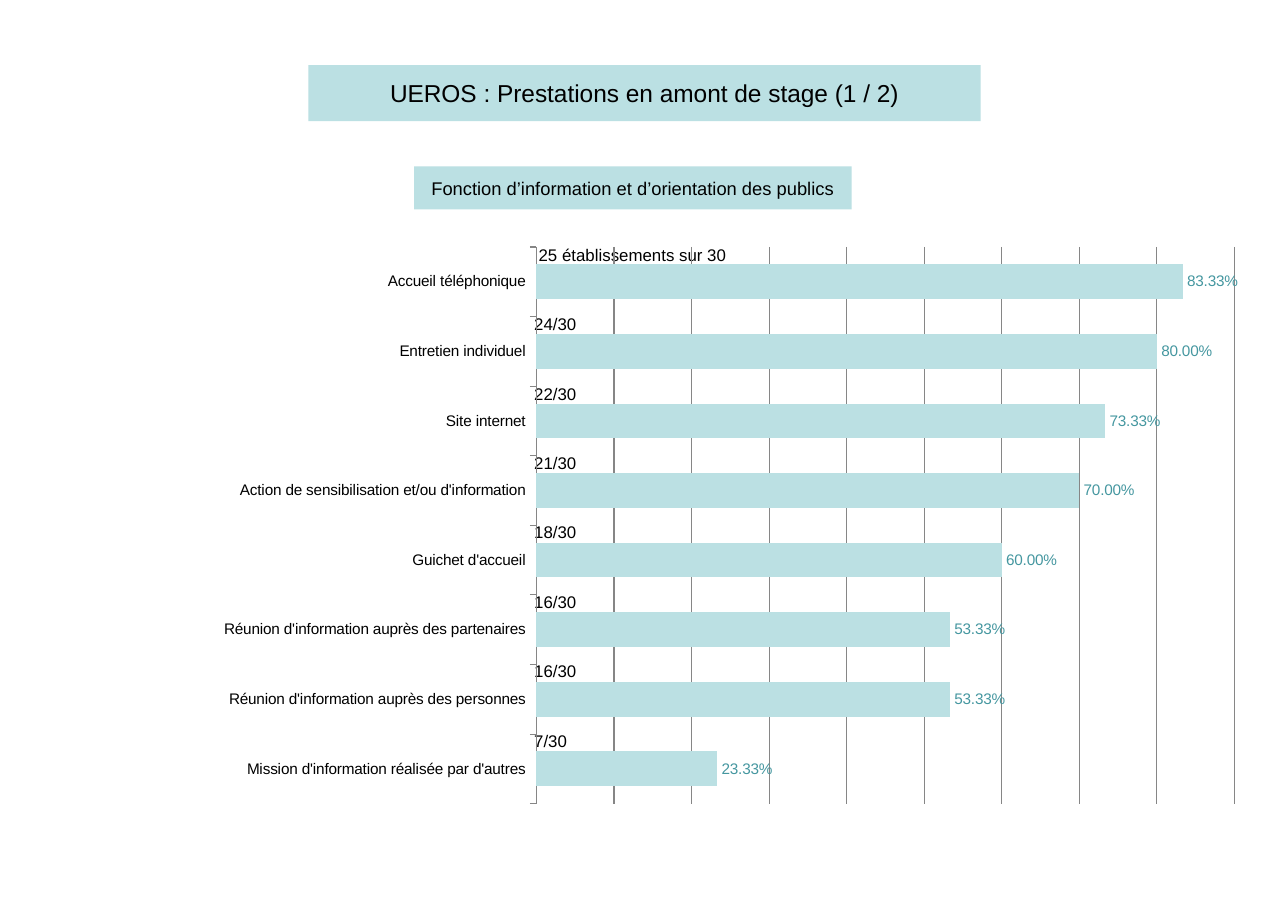
from lxml import etree
from pptx import Presentation
from pptx.chart import data
from pptx.dml import color
from pptx.enum import chart as ch, shapes, text
from pptx.oxml import ns
from pptx.util import Inches, Pt

FONT = "Arial"
BLACK, PALE, TEAL, GREY = "000000", "BBE0E3", "4597A0", "868686"
TOTAL = 30
SERVICES = [
    ("Accueil téléphonique", 25),
    ("Entretien individuel", 24),
    ("Site internet", 22),
    ("Action de sensibilisation et/ou d'information", 21),
    ("Guichet d'accueil", 18),
    ("Réunion d'information auprès des partenaires", 16),
    ("Réunion d'information auprès des personnes", 16),
    ("Mission d'information réalisée par d'autres", 7),
]
PLOT = {"x": 0.383, "y": 0.063, "w": 0.595, "h": 0.931}


def rgb(value):
    """Turn a hex string into a colour."""
    return color.RGBColor.from_string(value)


def set_font(font, size, hue=BLACK):
    """Give a font its face, size and colour."""
    font.name = FONT
    font.size = Pt(size)
    font.color.rgb = rgb(hue)


def place(shape, left, top, width, height):
    """Set the position and size of a shape in inches."""
    shape.left, shape.top = Inches(left), Inches(top)
    shape.width, shape.height = Inches(width), Inches(height)


def write(shape, words, size, align=text.PP_ALIGN.LEFT, anchor=text.MSO_ANCHOR.TOP):
    """Write one unwrapped line of text in a shape."""
    frame = shape.text_frame
    frame.text = words
    frame.word_wrap = False
    frame.auto_size = text.MSO_AUTO_SIZE.NONE
    frame.vertical_anchor = anchor
    para = frame.paragraphs[0]
    para.alignment = align
    set_font(para.runs[0].font, size)


def format_banner(shape, words, size):
    """Make a shape a pale banner with centred text."""
    shape.fill.solid()
    shape.fill.fore_color.rgb = rgb(PALE)
    shape.line.fill.background()
    write(shape, words, size, text.PP_ALIGN.CENTER, text.MSO_ANCHOR.MIDDLE)


def add_title(page, words):
    """Fill the title placeholder as a banner."""
    title = page.shapes.title
    place(title, 2.8, 0.59, 6.1, 0.51)
    format_banner(title, words, 16)


def add_subtitle(page, words):
    """Add the smaller banner under the title."""
    box = page.shapes.add_shape(
        shapes.MSO_SHAPE.RECTANGLE, Inches(3.76), Inches(1.51), Inches(3.97), Inches(0.39))
    box.shadow.inherit = False
    format_banner(box, words, 12)


def add_count(page, row, count):
    """Add the number of establishments above a bar."""
    if row == 0:
        words, left, width = f"{count} établissements sur {TOTAL}", 4.79, 1.91
    else:
        words, left, width = f"{count}/{TOTAL}", 4.75, 0.54
    box = page.shapes.add_textbox(
        Inches(left), Inches(2.17 + 0.63 * row), Inches(width), Inches(0.24))
    write(box, words, 11)


def set_plot_layout(chart):
    """Fix the inner plot area and leave the chart background clear."""
    chart_space = chart.element
    plot_area = chart_space.find(".//" + ns.qn("c:plotArea"))
    for old in plot_area.findall(ns.qn("c:layout")):
        plot_area.remove(old)
    layout = etree.Element(ns.qn("c:layout"))
    manual = etree.SubElement(layout, ns.qn("c:manualLayout"))
    settings = {"layoutTarget": "inner", "xMode": "edge", "yMode": "edge", **PLOT}
    for name, value in settings.items():
        etree.SubElement(manual, ns.qn(f"c:{name}")).set("val", str(value))
    plot_area.insert(0, layout)
    clear = etree.Element(ns.qn("c:spPr"))
    etree.SubElement(clear, ns.qn("a:noFill"))
    outline = etree.SubElement(clear, ns.qn("a:ln"))
    etree.SubElement(outline, ns.qn("a:noFill"))
    chart_space.find(ns.qn("c:chart")).addnext(clear)


def format_line(line):
    """Draw a thin grey chart line."""
    line.color.rgb = rgb(GREY)
    line.width = Pt(0.75)


def add_service_chart(page):
    """Add the bar chart of services with their shares."""
    chart_data = data.CategoryChartData(number_format="0.00%")
    rows = SERVICES[::-1]
    chart_data.categories = [name for name, _ in rows]
    chart_data.add_series("Series 1", [round(count / TOTAL, 4) for _, count in rows])
    chart = page.shapes.add_chart(
        ch.XL_CHART_TYPE.BAR_CLUSTERED, Inches(0.79), Inches(1.9),
        Inches(10.65), Inches(5.43), chart_data).chart
    chart.has_legend = False
    chart.has_title = False
    set_font(chart.font, 10)
    set_plot_layout(chart)

    values = chart.value_axis
    values.visible = False
    values.minimum_scale, values.maximum_scale, values.major_unit = 0, 0.9, 0.1
    values.has_major_gridlines = True
    format_line(values.major_gridlines.format.line)
    names = chart.category_axis
    names.major_tick_mark = ch.XL_TICK_MARK.OUTSIDE
    format_line(names.format.line)

    plot = chart.plots[0]
    plot.gap_width = 100
    plot.vary_by_categories = False
    bars = plot.series[0]
    bars.format.fill.solid()
    bars.format.fill.fore_color.rgb = rgb(PALE)
    labels = bars.data_labels
    labels.show_value = True
    labels.number_format = "0.00%"
    labels.number_format_is_linked = False
    labels.position = ch.XL_LABEL_POSITION.OUTSIDE_END
    set_font(labels.font, 10, TEAL)


def main():
    """Build and save the slide."""
    deck = Presentation()
    deck.slide_width, deck.slide_height = Inches(11.69), Inches(8.27)
    page = deck.slides.add_slide(deck.slide_layouts.get_by_name("Title Only"))
    add_title(page, "UEROS : Prestations en amont de stage (1 / 2)")
    add_subtitle(page, "Fonction d’information et d’orientation des publics")
    for row, (_, count) in enumerate(SERVICES):
        add_count(page, row, count)
    add_service_chart(page)
    deck.save("out.pptx")


if __name__ == "__main__":
    main()
